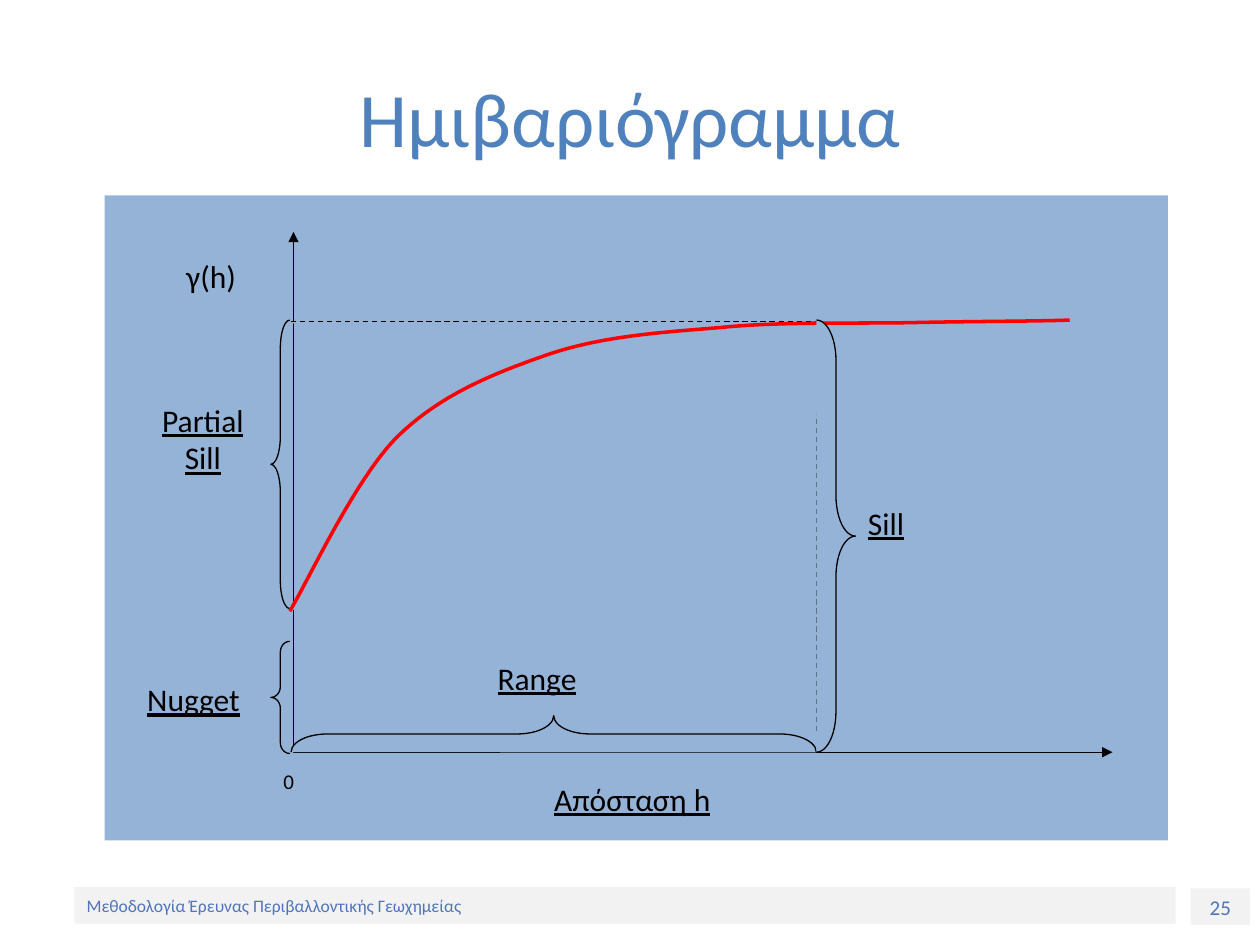
from itertools import chain

from lxml import etree
from pptx import Presentation
from pptx import util as u
from pptx.dml.color import RGBColor
from pptx.enum import dml, shapes, text
from pptx.oxml.ns import qn

COLORS = {"panel": "95B3D7", "title": "4F81BD", "footer": "5075BC",
          "bar": "F2F2F2", "ink": "000000", "curve": "FF0000"}
FONT = "Calibri"
LEFT, CENTER = text.PP_ALIGN.LEFT, text.PP_ALIGN.CENTER
LEFT_BRACE = shapes.MSO_SHAPE.LEFT_BRACE
RIGHT_BRACE = shapes.MSO_SHAPE.RIGHT_BRACE

TITLE = "Ημιβαριόγραμμα"
PANEL = (0.83, 1.55, 8.44, 5.12)
# Landmarks of the plot, in inches
AXIS_X, AXIS_TOP, AXIS_Y, AXIS_END = 2.33, 1.84, 5.97, 8.83
ORIGIN_X, RANGE_X, SILL_Y, NUGGET_Y = 2.31, 6.48, 2.54, 4.83
LABEL_H = 0.44

# text, (left, top, width, height), format
FOOTERS = [
    ("25", (9.45, 7.05, 0.47, 0.29), {"size": 12, "align": CENTER}),
    ("Μεθοδολογία Έρευνας Περιβαλλοντικής Γεωχημείας",
     (0.59, 7.04, 8.74, 0.29), {"size": 10, "anchor": text.MSO_ANCHOR.MIDDLE}),
]
LABELS = [
    ("Απόσταση h", (4.3, 6.14, 1.7, LABEL_H), {"underline": True}),
    ("γ(h)", (1.38, 1.99, 0.77, LABEL_H), {}),
    ("Range", (3.85, 5.18, 1.08, LABEL_H), {"underline": True}),
    ("Sill", (6.79, 3.95, 1.08, LABEL_H), {"underline": True}),
    ("Partial Sill", (1.07, 3.13, 1.08, 0.74), {"underline": True, "align": CENTER}),
    ("Nugget", (1.07, 5.35, 1.08, LABEL_H), {"underline": True}),
]
ZERO = ("0", (2.15, 6.05, 0.46, LABEL_H), {"size": 12})

# Start point, then two control points and an end point per segment
CURVE = [(2.3, 4.85),
         (2.44, 4.62), (2.81, 3.82), (3.14, 3.48),
         (3.48, 3.14), (3.9, 2.97), (4.33, 2.82),
         (4.76, 2.67), (5.22, 2.64), (5.71, 2.6),
         (6.2, 2.55), (6.8, 2.57), (7.26, 2.56),
         (7.72, 2.55), (8.23, 2.55), (8.49, 2.54)]


def rgb(name):
    return RGBColor.from_string(COLORS[name])


def paint(shape, fill="panel", line=None, width=0.75):
    shape.shadow.inherit = False
    shape.fill.solid()
    shape.fill.fore_color.rgb = rgb(fill)
    if line:
        shape.line.color.rgb = rgb(line)
        shape.line.width = u.Pt(width)
    else:
        shape.line.fill.background()
    return shape


def add_preset(page, kind, place, **look):
    return paint(page.shapes.add_shape(kind, *map(u.Inches, place)), **look)


def write(shape, words, size=18, color="ink", align=LEFT, underline=None,
          anchor=text.MSO_ANCHOR.TOP):
    frame = shape.text_frame
    frame.word_wrap = True
    frame.vertical_anchor = anchor
    para = frame.paragraphs[0]
    para.alignment = align
    span = para.add_run()
    span.text = words
    font = span.font
    font.name, font.size, font.underline = FONT, u.Pt(size), underline
    font.color.rgb = rgb(color)


def add_label(page, words, place, fill="panel", **style):
    box = add_preset(page, shapes.MSO_SHAPE.RECTANGLE, place, fill=fill)
    write(box, words, **style)


def add_brace(page, kind, place, bend, rotation=0):
    brace = add_preset(page, kind, place, line="ink")
    brace.adjustments[0] = bend
    brace.adjustments[1] = 0.5
    brace.rotation = rotation


def add_path(page, points, line="ink", width=0.75):
    start, *rest = [tuple(map(u.Inches, point)) for point in points]
    builder = page.shapes.build_freeform(*start, scale=1.0)
    builder.add_line_segments(rest, close=False)
    return paint(builder.convert_to_shape(), line=line, width=width)


def add_arrowheads(shape):
    for end in ("a:headEnd", "a:tailEnd"):
        etree.SubElement(shape.line._get_or_add_ln(), qn(end), type="triangle")


def bend_segments(shape):
    """Turn every three straight segments into one cubic Bezier segment."""
    path = next(shape._element.iter(qn("a:path")))
    lines = path.findall(qn("a:lnTo"))
    for first in range(0, len(lines), 3):
        bezier = etree.SubElement(path, qn("a:cubicBezTo"))
        for point in chain.from_iterable(lines[first:first + 3]):
            bezier.append(point)
    for line in lines:
        path.remove(line)


def main():
    deck = Presentation()
    deck.slide_width, deck.slide_height = u.Inches(10), u.Inches(7.5)
    page = deck.slides.add_slide(deck.slide_layouts[5])

    title = page.shapes.title
    title.left, title.top, title.width, title.height = map(
        u.Inches, (0.5, 0.3, 9, 1.25))
    write(title, TITLE, size=44, color="title", align=CENTER,
          anchor=text.MSO_ANCHOR.MIDDLE)

    for words, place, style in FOOTERS:
        add_label(page, words, place, fill="bar", color="footer", **style)

    add_preset(page, shapes.MSO_SHAPE.RECTANGLE, PANEL)
    axes = add_path(page, [(AXIS_X, AXIS_TOP), (AXIS_X, AXIS_Y), (AXIS_END, AXIS_Y)])
    add_arrowheads(axes)
    guide_y = SILL_Y + 0.01
    guide = add_path(page, [(ORIGIN_X, guide_y), (RANGE_X, guide_y), (RANGE_X, 5.8)])
    guide.line.dash_style = dml.MSO_LINE.DASH

    for words, place, style in LABELS:
        add_label(page, words, place, **style)

    add_brace(page, LEFT_BRACE, (2.15, 5.09, 0.15, 0.89), 0.566)
    add_brace(page, LEFT_BRACE, (2.15, SILL_Y, 0.15, NUGGET_Y - SILL_Y), 1.481)
    # The range brace is turned about its centre to lie along the axis
    depth, span = 0.29, RANGE_X - ORIGIN_X
    left = (ORIGIN_X + RANGE_X - depth) / 2
    top = AXIS_Y - (depth + span) / 2
    add_brace(page, RIGHT_BRACE, (left, top, depth, span), 0.997, rotation=270)

    words, place, style = ZERO
    add_label(page, words, place, **style)
    bend_segments(add_path(page, CURVE, line="curve", width=2))
    add_brace(page, RIGHT_BRACE, (RANGE_X, SILL_Y, 0.31, AXIS_Y - SILL_Y), 1.038)

    deck.save("out.pptx")


if __name__ == "__main__":
    main()
